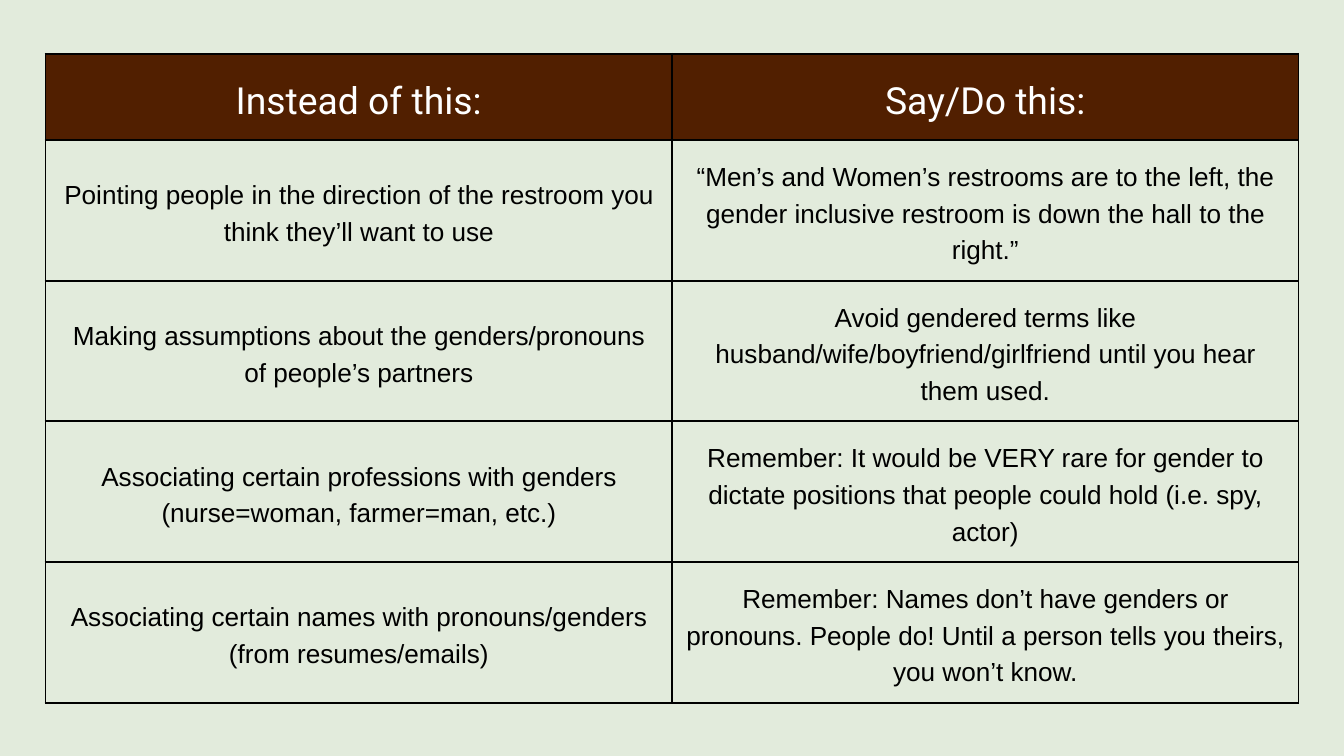
from dataclasses import dataclass

import lxml.etree
import pptx
import pptx.dml.color
import pptx.enum.text
import pptx.oxml.ns
import pptx.util

EMU_PER_PX = 9525  # 96 px to the inch


@dataclass(frozen=True)
class Theme:
    background: str = "E2EBDC"
    header_fill: str = "511F00"
    header_text: str = "FFFFFF"
    body_text: str = "000000"
    border: str = "000000"
    border_width: float = 2.25
    header_font: str = "Roboto"
    body_font: str = "Arial"
    header_size: int = 40
    body_size: int = 28
    line_spacing: float = 1.4  # line height per point of type size


THEME = Theme()

HEADER = ("Instead of this:", "Say/Do this:")
ADVICE = (
    ("Pointing people in the direction of the restroom you think they’ll want to use",
     "“Men’s and Women’s restrooms are to the left, the gender inclusive restroom "
     "is down the hall to the right.”"),
    ("Making assumptions about the genders/pronouns of people’s partners",
     "Avoid gendered terms like husband/wife/boyfriend/girlfriend until you hear them used."),
    ("Associating certain professions with genders (nurse=woman, farmer=man, etc.)",
     "Remember: It would be VERY rare for gender to dictate positions that people "
     "could hold (i.e. spy, actor)"),
    ("Associating certain names with pronouns/genders (from resumes/emails)",
     "Remember: Names don’t have genders or pronouns. People do! Until a person "
     "tells you theirs, you won’t know."),
)


def px(length):
    return pptx.util.Emu(length * EMU_PER_PX)


def rgb(value):
    return pptx.dml.color.RGBColor.from_string(value)


def add_borders(cell):
    """Draw all four sides; the lines must come before the fill in the XML."""
    properties = cell._tc.get_or_add_tcPr()
    qn = pptx.oxml.ns.qn
    for index, side in enumerate(("a:lnL", "a:lnR", "a:lnT", "a:lnB")):
        line = lxml.etree.Element(qn(side), w=str(pptx.util.Pt(THEME.border_width)))
        fill = lxml.etree.SubElement(line, qn("a:solidFill"))
        lxml.etree.SubElement(fill, qn("a:srgbClr"), val=THEME.border)
        properties.insert(index, line)


def fill_cell(cell, text, is_header):
    size = THEME.header_size if is_header else THEME.body_size
    cell.margin_left = cell.margin_right = px(20)
    cell.margin_top = cell.margin_bottom = px(20)
    cell.vertical_anchor = pptx.enum.text.MSO_ANCHOR.MIDDLE
    if is_header:
        cell.fill.solid()
        cell.fill.fore_color.rgb = rgb(THEME.header_fill)
    else:
        cell.fill.background()
    add_borders(cell)

    paragraph = cell.text_frame.paragraphs[0]
    paragraph.alignment = pptx.enum.text.PP_ALIGN.CENTER
    paragraph.line_spacing = pptx.util.Pt(size * THEME.line_spacing)
    run = paragraph.add_run()
    run.text = text
    run.font.size = pptx.util.Pt(size)
    run.font.bold = False
    run.font.name = THEME.header_font if is_header else THEME.body_font
    run.font.color.rgb = rgb(THEME.header_text if is_header else THEME.body_text)


def add_advice_table(slide, left, top, width, header_height, row_height):
    rows = (HEADER,) + ADVICE
    height = header_height + row_height * len(ADVICE)
    table = slide.shapes.add_table(
        len(rows), len(HEADER), px(left), px(top), px(width), px(height)).table
    table.horz_banding = False
    table.first_row = False
    for column in table.columns:
        column.width = px(width // len(HEADER))
    for row_index, texts in enumerate(rows):
        is_header = row_index == 0
        table.rows[row_index].height = px(header_height if is_header else row_height)
        for column_index, text in enumerate(texts):
            fill_cell(table.cell(row_index, column_index), text, is_header)


def main():
    presentation = pptx.Presentation()
    presentation.slide_width = px(1920)
    presentation.slide_height = px(1080)

    # Blank layout: the slide has no title
    slide = presentation.slides.add_slide(presentation.slide_layouts[6])
    slide.background.fill.solid()
    slide.background.fill.fore_color.rgb = rgb(THEME.background)

    # Table of phrases to avoid and what to say or do
    add_advice_table(slide, left=65, top=77, width=1790, header_height=123, row_height=201)
    presentation.save("out.pptx")


if __name__ == "__main__":
    main()
